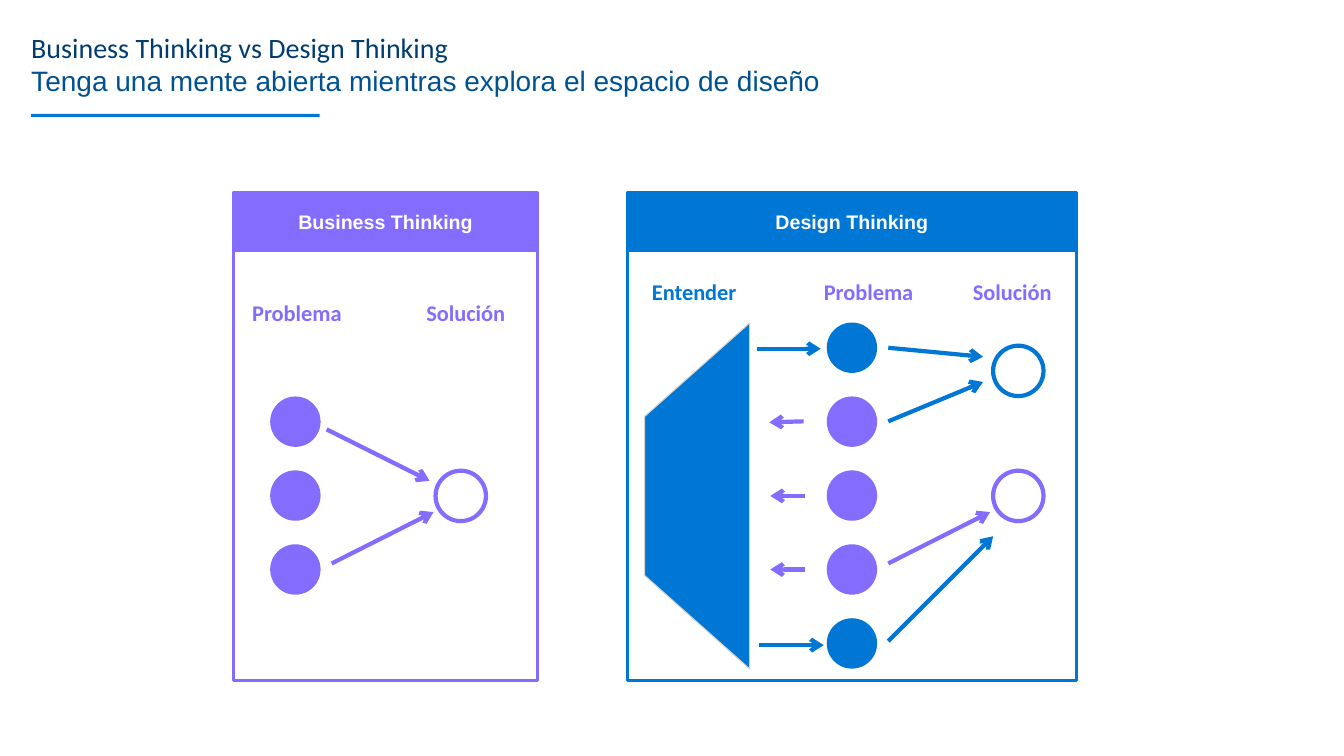
from lxml.etree import SubElement
from pptx import Presentation
from pptx.dml.color import RGBColor
from pptx.enum.shapes import MSO_CONNECTOR as Connector, MSO_SHAPE as Shape
from pptx.enum.text import MSO_ANCHOR as Anchor, PP_ALIGN as Align
from pptx.oxml.ns import qn
from pptx.util import Inches, Pt

COLORS = {
    "purple": "846CFF",
    "blue": "0077D4",
    "navy": "003C70",
    "deep": "005192",
    "edge": "D6D1CC",
    "white": "FFFFFF",
}


def rgb(color):
    return RGBColor.from_string(COLORS[color])


class ThinkingSlide:
    def __init__(self, prs):
        self.slide = prs.slides.add_slide(prs.slide_layouts[5])
        self.shapes = self.slide.shapes

    def style(self, paragraph, size, font, color, bold=False, align=Align.CENTER):
        paragraph.alignment = align
        for run in paragraph.runs:
            run.font.size = Pt(size)
            run.font.name = font
            run.font.bold = bold
            run.font.color.rgb = rgb(color)

    def title(self, heading, subtitle):
        title = self.shapes.title
        title.left, title.top = Inches(0.31), Inches(0.3)
        title.width, title.height = Inches(12.7), Inches(0.67)
        frame = title.text_frame
        frame.text = f"{heading}\n{subtitle}"
        frame.word_wrap = True
        frame.vertical_anchor = Anchor.TOP
        frame.margin_left = frame.margin_right = 0
        frame.margin_top = frame.margin_bottom = 0
        looks = (("Calibri", "navy"), ("Arial", "deep"))
        for paragraph, (font, color) in zip(frame.paragraphs, looks):
            self.style(paragraph, 20, font, color, align=Align.LEFT)

    def shape(self, kind, left, top, width, height, fill=None, line=None, weight=0):
        shape = self.shapes.add_shape(
            kind, Inches(left), Inches(top), Inches(width), Inches(height))
        shape.shadow.inherit = False
        if fill:
            shape.fill.solid()
            shape.fill.fore_color.rgb = rgb(fill)
        else:
            shape.fill.background()
        if line:
            shape.line.color.rgb = rgb(line)
            shape.line.width = Pt(weight)
        else:
            shape.line.fill.background()
        return shape

    def panel(self, heading, left, width, color):
        header = self.shape(Shape.RECTANGLE, left, 1.91, width, 0.58, color, color, 2.25)
        frame = header.text_frame
        frame.text = heading
        frame.vertical_anchor = Anchor.MIDDLE
        self.style(frame.paragraphs[0], 14, "Arial", "white", bold=True)
        self.shape(Shape.RECTANGLE, left, 1.91, width, 4.84, None, color, 2.25)

    def label(self, text, left, top, width, color):
        box = self.shapes.add_textbox(
            Inches(left), Inches(top), Inches(width), Inches(0.37))
        frame = box.text_frame
        frame.word_wrap = True
        frame.text = text
        self.style(frame.paragraphs[0], 16, "Calibri", color, bold=True)

    def problem(self, left, row, color):
        self.shape(Shape.OVAL, left, 3.2 + 2.2 * row / 3, 0.5, 0.5, color)

    def solution(self, left, top, color):
        self.shape(Shape.OVAL, left, top, 0.5, 0.5, None, color, 3)

    def arrow(self, start, end, color):
        arrow = self.shapes.add_connector(
            Connector.STRAIGHT, *(Inches(value) for value in start + end))
        arrow.line.color.rgb = rgb(color)
        arrow.line.width = Pt(3)
        SubElement(arrow.line._get_or_add_ln(), qn("a:tailEnd"), type="arrow")
        SubElement(arrow._element.spPr, qn("a:effectLst"))

    def understanding(self):
        funnel = self.shape(Shape.TRAPEZOID, 5.2, 4.4, 3.43, 1.04, "blue", "edge", 0.75)
        funnel.adjustments[0] = 0.89
        funnel.rotation = 270


def main():
    prs = Presentation()
    prs.slide_width, prs.slide_height = Inches(13.33), Inches(7.5)
    page = ThinkingSlide(prs)

    page.title("Business Thinking vs Design Thinking",
               "Tenga una mente abierta mientras explora el espacio de diseño")
    page.shape(Shape.RECTANGLE, 0.31, 1.13, 2.86, 0.03, "blue")

    page.panel("Business Thinking", 2.32, 3.01, "purple")
    page.panel("Design Thinking", 6.22, 4.46, "blue")

    for heading, left, top, width, color in (
        ("Problema", 2.32, 2.92, 1.25, "purple"),
        ("Solución", 4.04, 2.92, 1.16, "purple"),
        ("Entender", 6.14, 2.71, 1.49, "blue"),
        ("Problema", 7.95, 2.71, 1.33, "purple"),
        ("Solución", 9.46, 2.71, 1.16, "purple"),
    ):
        page.label(heading, left, top, width, color)

    page.understanding()
    for row in range(1, 4):
        page.problem(2.68, row, "purple")
    for row in range(5):
        page.problem(8.2, row, "blue" if row in (0, 4) else "purple")

    for left, top, color in (
        (4.32, 4.67, "purple"),
        (9.85, 4.67, "purple"),
        (9.85, 3.43, "blue"),
    ):
        page.solution(left, top, color)

    for start, end, color in (
        ((3.24, 4.26), (4.26, 4.77), "purple"),
        ((3.29, 5.59), (4.3, 5.08), "purple"),
        ((7.51, 3.46), (8.14, 3.46), "blue"),
        ((7.53, 6.4), (8.17, 6.4), "blue"),
        ((7.97, 4.18), (7.63, 4.19), "purple"),
        ((7.98, 4.92), (7.64, 4.92), "purple"),
        ((7.98, 5.65), (7.64, 5.65), "purple"),
        ((8.81, 3.45), (9.75, 3.54), "blue"),
        ((8.81, 4.18), (9.75, 3.79), "blue"),
        ((8.81, 5.59), (9.82, 5.08), "purple"),
        ((8.81, 6.36), (9.85, 5.32), "blue"),
    ):
        page.arrow(start, end, color)

    prs.save("out.pptx")


if __name__ == "__main__":
    main()
